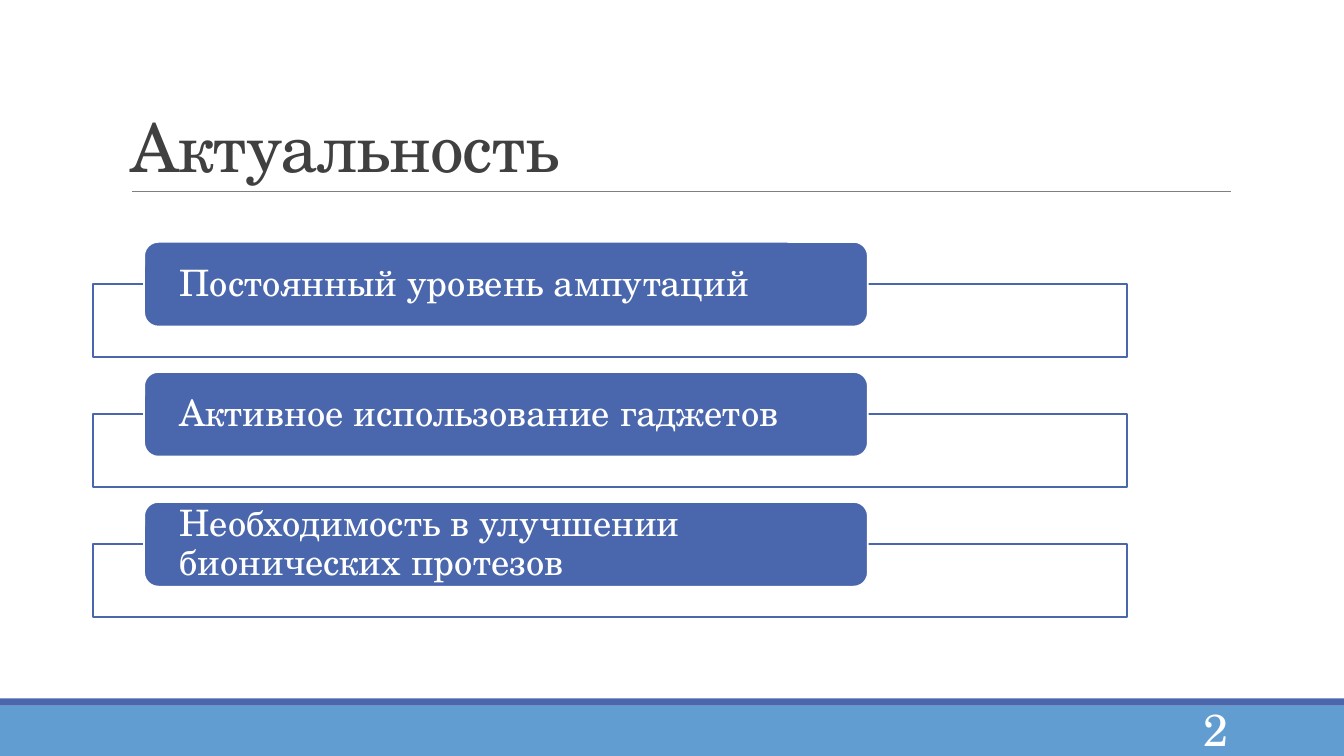
from pptx import Presentation
from pptx import util as u
from pptx.dml.color import RGBColor
from pptx.enum import shapes, text
from pptx.oxml.ns import qn
from lxml import etree

Pt = u.Pt
FONT = "TeX Gyre Schola"
BLUE, SKY, WHITE, GREY, DARK = "4A66AC", "629DD1", "FFFFFF", "808080", "404040"
REASONS = [
    "Постоянный уровень ампутаций",
    "Активное использование гаджетов",
    "Необходимость в улучшении бионических протезов",
]


def color(value):
    return RGBColor.from_string(value)


def add_box(s, kind, box, fill, line=None):
    sp = s.shapes.add_shape(kind, *map(Pt, box))
    sp.shadow.inherit = False
    sp.fill.solid()
    sp.fill.fore_color.rgb = color(fill)
    if line:
        sp.line.color.rgb = color(line)
        sp.line.width = Pt(1.25)
    else:
        sp.line.fill.background()
    return sp


def set_alpha(sp, percent):
    clr = sp._element.spPr.find(qn("a:solidFill"))[0]
    etree.SubElement(clr, qn("a:alpha")).set("val", str(percent * 1000))


def add_rule(s, x1, x2, y):
    cn = s.shapes.add_connector(shapes.MSO_CONNECTOR.STRAIGHT, Pt(x1), Pt(y), Pt(x2), Pt(y))
    cn.line.color.rgb = color(GREY)
    cn.line.width = Pt(0.5)
    etree.SubElement(cn._element.spPr, qn("a:effectLst"))


def write(sp, words, size, fill, anchor, align=text.PP_ALIGN.LEFT, spacing=1.0):
    tf = sp.text_frame
    tf.word_wrap = True
    tf.vertical_anchor = anchor
    p = tf.paragraphs[0]
    p.alignment = align
    p.line_spacing = spacing
    r = p.add_run()
    r.text = words
    r.font.name = FONT
    r.font.size = Pt(size)
    r.font.color.rgb = color(fill)
    return r


def add_text(s, box, *args, **kwargs):
    return write(s.shapes.add_textbox(*map(Pt, box)), *args, **kwargs)


def add_reason(s, words, top):
    # Outlined frame behind the label
    frame = add_box(s, shapes.MSO_SHAPE.RECTANGLE, (66.24, top + 30.24, 738.72, 51.84), WHITE, BLUE)
    set_alpha(frame, 90)
    # Rounded label
    label = add_box(s, shapes.MSO_SHAPE.ROUNDED_RECTANGLE, (102.96, top, 516.96, 60.48), BLUE, WHITE)
    tf = label.text_frame
    tf.margin_left = tf.margin_right = Pt(22.32)
    tf.margin_top = tf.margin_bottom = Pt(2.88)
    write(label, words, 26, WHITE, text.MSO_ANCHOR.MIDDLE, spacing=0.9)


def main():
    prs = Presentation()
    prs.slide_width, prs.slide_height = Pt(960), Pt(540)
    s = prs.slides.add_slide(prs.slide_layouts[6])

    # Footer bands
    add_box(s, shapes.MSO_SHAPE.RECTANGLE, (0, 504, 960, 36), SKY)
    add_box(s, shapes.MSO_SHAPE.RECTANGLE, (0, 498.96, 960, 5.04), BLUE)

    # Title and rule
    add_rule(s, 94.32, 879.12, 136.8)
    r = add_text(s, (86.4, 22.32, 792, 114.48), "Актуальность", 48, DARK,
                 text.MSO_ANCHOR.BOTTOM, spacing=0.85)
    r._r.get_or_add_rPr().set("spc", "-50")

    # Reasons
    for i, words in enumerate(REASONS):
        add_reason(s, words, 172.8 + i * 92.88)

    # Slide number
    add_text(s, (852.48, 508.32, 30.24, 24.48), "2", 32, WHITE,
             text.MSO_ANCHOR.MIDDLE, align=text.PP_ALIGN.RIGHT)

    prs.save("out.pptx")


if __name__ == "__main__":
    main()
